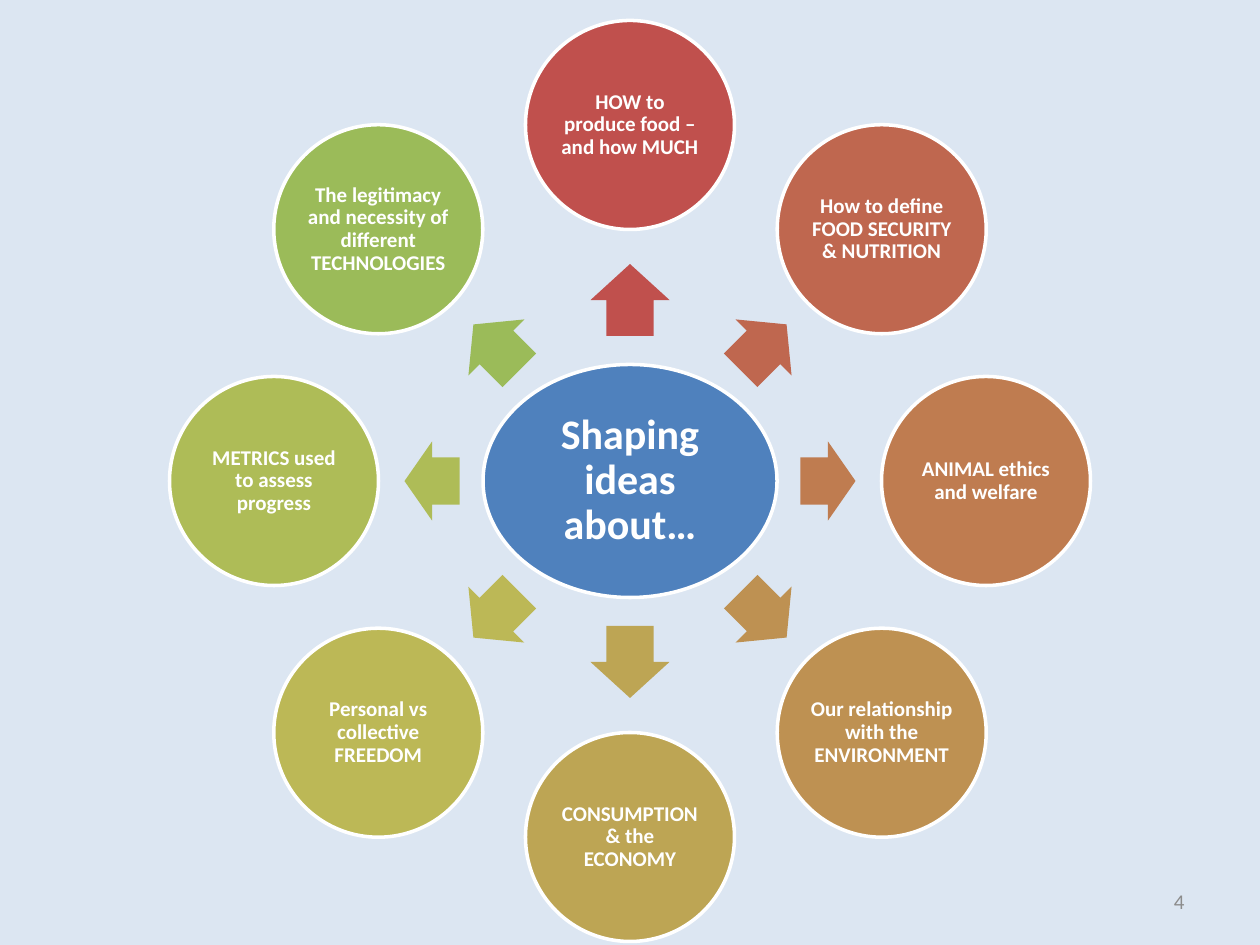
from dataclasses import dataclass
from math import cos, radians, sin

from pptx import Presentation
from pptx.dml.color import RGBColor
from pptx.enum.shapes import MSO_SHAPE
from pptx.enum.text import MSO_ANCHOR, PP_ALIGN
from pptx.util import Emu, Pt

PX_PER_INCH = 126
WIDTH, HEIGHT = 1260, 945
CENTER_X, CENTER_Y = 630, 481
RING_RADIUS = 356
TOPIC_SIZE = 209
HUB_WIDTH, HUB_HEIGHT = 294, 233
ARROW_DEPTH = 79

BACKGROUND = RGBColor(0xDC, 0xE6, 0xF2)
WHITE = RGBColor(0xFF, 0xFF, 0xFF)
GREY = RGBColor(0x8C, 0x8C, 0x8C)
HUB_BLUE = RGBColor(0x4F, 0x81, 0xBD)
RED = RGBColor(0xC0, 0x50, 0x4D)
BRICK = RGBColor(0xBF, 0x67, 0x4F)
COPPER = RGBColor(0xBF, 0x7C, 0x50)
OCHRE = RGBColor(0xBE, 0x91, 0x52)
SAND = RGBColor(0xBD, 0xA5, 0x54)
OLIVE = RGBColor(0xBC, 0xB8, 0x56)
LIME = RGBColor(0xAE, 0xBC, 0x57)
GREEN = RGBColor(0x9B, 0xBB, 0x59)


@dataclass(frozen=True)
class Topic:
    text: str
    color: RGBColor


@dataclass(frozen=True)
class Arrow:
    length: int
    distance: int


TOPICS = [
    Topic("HOW to produce food – and how MUCH", RED),
    Topic("How to define FOOD SECURITY & NUTRITION", BRICK),
    Topic("ANIMAL ethics and welfare", COPPER),
    Topic("Our relationship with the ENVIRONMENT", OCHRE),
    Topic("CONSUMPTION & the ECONOMY", SAND),
    Topic("Personal vs collective FREEDOM", OLIVE),
    Topic("METRICS used to assess progress", LIME),
    Topic("The legitimacy and necessity of different TECHNOLOGIES", GREEN),
]
VERTICAL = Arrow(72, 181)
DIAGONAL = Arrow(65, 189)
HORIZONTAL = Arrow(55, 198)
ARROWS = [VERTICAL, DIAGONAL, HORIZONTAL, DIAGONAL]

LABEL_FONT = {"name": "Calibri", "bold": True}
NUMBER_FONT = {"name": "Calibri", "size": Pt(12)}


def px(value: float) -> Emu:
    return Emu(round(value * 914400 / PX_PER_INCH))


def polar(angle: int, distance: int) -> tuple[float, float]:
    a = radians(angle)
    return CENTER_X + distance * cos(a), CENTER_Y + distance * sin(a)


def set_attrs(target, values: dict) -> None:
    for name, value in values.items():
        setattr(target, name, value)


def write(tf, text: str, align: PP_ALIGN, font: dict, color: RGBColor):
    set_attrs(tf, {"word_wrap": True, "vertical_anchor": MSO_ANCHOR.MIDDLE})
    p = tf.paragraphs[0]
    p.alignment = align
    r = p.add_run()
    r.text = text
    set_attrs(r.font, font)
    r.font.color.rgb = color
    return p


def add_centered(s, kind: MSO_SHAPE, x: float, y: float, w: int, h: int, color: RGBColor):
    sp = s.shapes.add_shape(kind, px(x - w / 2), px(y - h / 2), px(w), px(h))
    sp.shadow.inherit = False
    sp.fill.solid()
    sp.fill.fore_color.rgb = color
    return sp


def add_bubble(s, topic: Topic, x: float, y: float, w: int, h: int, size: int, inset: int) -> None:
    sp = add_centered(s, MSO_SHAPE.OVAL, x, y, w, h, topic.color)
    sp.line.color.rgb = WHITE
    sp.line.width = Pt(2)
    tf = sp.text_frame
    set_attrs(tf, {f"margin_{side}": px(inset) for side in ("left", "top", "right", "bottom")})
    p = write(tf, topic.text, PP_ALIGN.CENTER, LABEL_FONT | {"size": Pt(size)}, WHITE)
    p.line_spacing = 0.9


def add_arrow(s, arrow: Arrow, angle: int, color: RGBColor) -> None:
    x, y = polar(angle, arrow.distance)
    sp = add_centered(s, MSO_SHAPE.RIGHT_ARROW, x, y, arrow.length, ARROW_DEPTH, color)
    sp.line.fill.background()
    sp.adjustments[0] = 0.6
    sp.adjustments[1] = 0.5
    sp.rotation = angle % 360


def add_slide_number(s, text: str) -> None:
    sp = s.shapes.add_textbox(px(903), px(876), px(294), px(50))
    write(sp.text_frame, text, PP_ALIGN.RIGHT, NUMBER_FONT, GREY)


def main() -> None:
    prs = Presentation()
    set_attrs(prs, {"slide_width": px(WIDTH), "slide_height": px(HEIGHT)})
    s = prs.slides.add_slide(prs.slide_layouts[6])
    s.background.fill.solid()
    s.background.fill.fore_color.rgb = BACKGROUND

    hub = Topic("Shaping ideas about…", HUB_BLUE)
    add_bubble(s, hub, CENTER_X, CENTER_Y, HUB_WIDTH, HUB_HEIGHT, 24, 4)
    for i, topic in enumerate(TOPICS):
        angle = -90 + i * 360 // len(TOPICS)
        add_arrow(s, ARROWS[i % len(ARROWS)], angle, topic.color)
        add_bubble(s, topic, *polar(angle, RING_RADIUS), TOPIC_SIZE, TOPIC_SIZE, 12, 2)
    add_slide_number(s, "4")
    prs.save("out.pptx")


if __name__ == "__main__":
    main()
